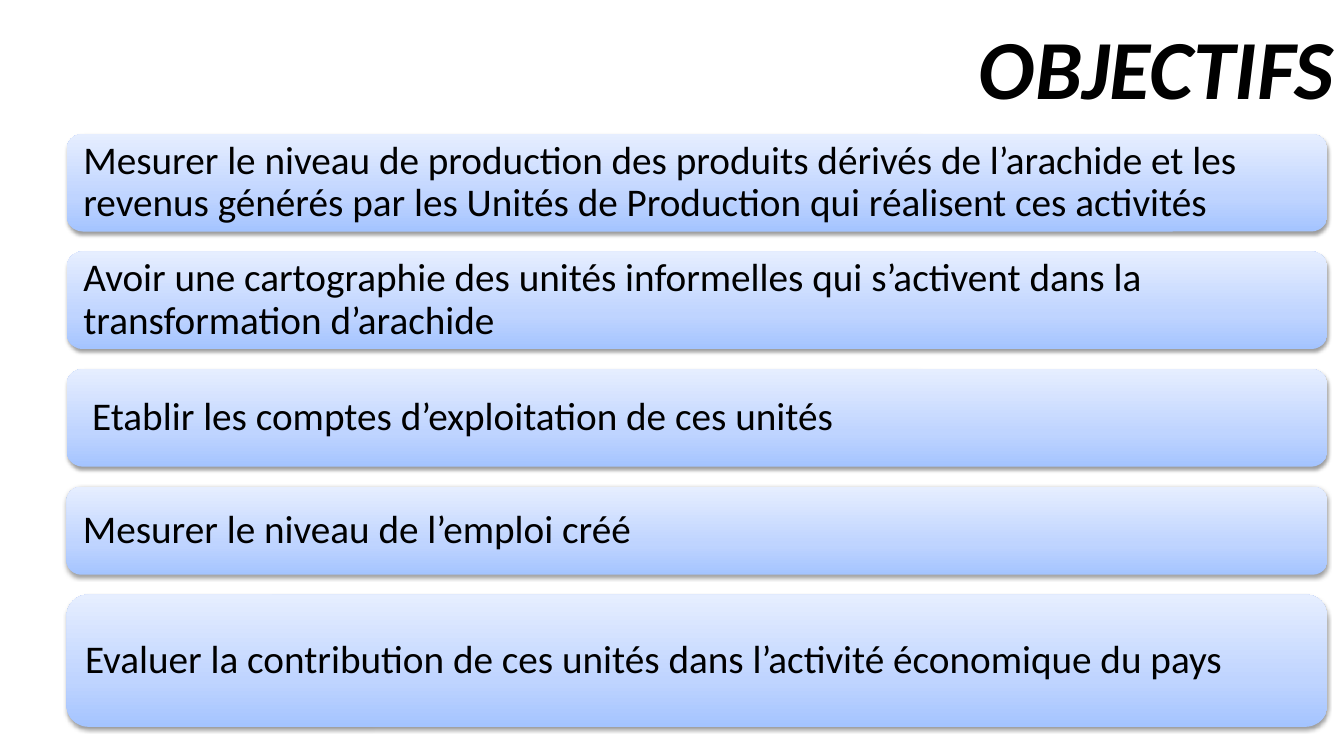
from lxml import etree
from pptx import Presentation
from pptx.dml.color import RGBColor
from pptx.enum import shapes, text
from pptx.oxml import ns
from pptx.util import Pt

TITLE = "OBJECTIFS"
GOALS = [
    ("Mesurer le niveau de production des produits dérivés de l’arachide et les "
     "revenus générés par les Unités de Production qui réalisent ces activités", 69.8, 0),
    ("Avoir une cartographie des unités informelles qui s’activent dans la "
     "transformation d’arachide", 69.8, 0),
    ("Etablir les comptes d’exploitation de ces unités", 69.8, 6.3),
    ("Mesurer le niveau de l’emploi créé", 62.9, 0),
    ("Evaluer la contribution de ces unités dans l’activité économique du pays", 94.5, 0),
]
BLACK = RGBColor(0, 0, 0)
STOPS = [
    (0, RGBColor(0xA4, 0xC4, 0xFF)),
    (35, RGBColor(0xBF, 0xD4, 0xFF)),
    (100, RGBColor(0xE6, 0xEE, 0xFF)),
]
LEFT, TOP, WIDTH, GAP, PAD = 47.5, 95.6, 900.7, 14.2, 8.64


def add_node(base, tag, **attrs):
    return etree.SubElement(base, ns.qn(tag), {k: str(v) for k, v in attrs.items()})


def add_text(box, words, size, align):
    frame = box.text_frame
    frame.word_wrap = True
    frame.vertical_anchor = text.MSO_ANCHOR.MIDDLE
    para = frame.paragraphs[0]
    para.alignment = align
    para.line_spacing = 0.9
    run = para.add_run()
    run.text = words
    run.font.name = "Calibri"
    run.font.size = Pt(size)
    run.font.color.rgb = BLACK
    return run


def shade(bar):
    bar.fill.gradient()
    bar.fill.gradient_angle = 90
    bar.line.fill.background()
    bar.shadow.inherit = False
    props = bar._element.spPr
    stops = props.find(".//" + ns.qn("a:gsLst"))
    for old in list(stops):
        stops.remove(old)
    for pos, color in STOPS:
        stop = add_node(stops, "a:gs", pos=pos * 1000)
        add_node(stop, "a:srgbClr", val=color)
    glow = add_node(props.find(ns.qn("a:effectLst")), "a:outerShdw",
                    blurRad=Pt(3.1), dist=Pt(1.6), dir=5400000, rotWithShape=0)
    tint = add_node(glow, "a:srgbClr", val=BLACK)
    add_node(tint, "a:alpha", val=38000)


def main():
    deck = Presentation()
    deck.slide_width, deck.slide_height = Pt(960), Pt(540)
    slide = deck.slides.add_slide(deck.slide_layouts[6])
    title = slide.shapes.add_textbox(Pt(58), Pt(3), Pt(902), Pt(88))
    run = add_text(title, TITLE, 60, text.PP_ALIGN.RIGHT)
    run.font.bold = run.font.italic = True
    title.text_frame.paragraphs[0].line_spacing = 1.0

    top = TOP
    for words, height, indent in GOALS:
        bar = slide.shapes.add_shape(shapes.MSO_SHAPE.ROUNDED_RECTANGLE,
                                     Pt(LEFT), Pt(top), Pt(WIDTH), Pt(height))
        shade(bar)
        add_text(bar, words, 28, text.PP_ALIGN.LEFT)
        frame = bar.text_frame
        frame.margin_left = Pt(PAD + indent)
        frame.margin_right = frame.margin_top = frame.margin_bottom = Pt(PAD)
        top += height + GAP
    deck.save("out.pptx")


if __name__ == "__main__":
    main()
